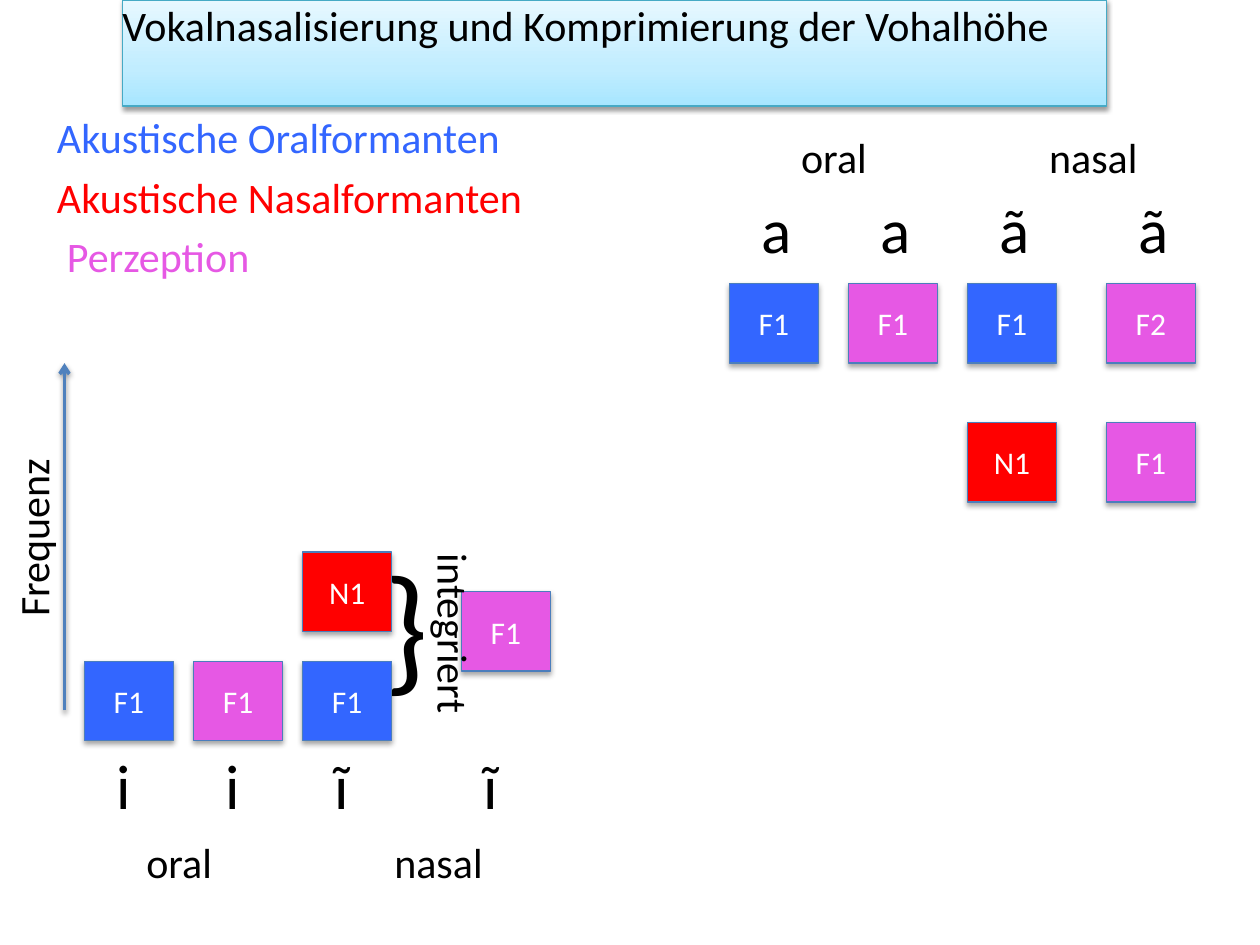
from collections import namedtuple
from copy import deepcopy

from lxml.etree import SubElement
from pptx import Presentation
from pptx.dml.color import RGBColor
from pptx.enum.shapes import MSO_CONNECTOR, MSO_SHAPE
from pptx.enum.text import MSO_ANCHOR, MSO_AUTO_SIZE, PP_ALIGN
from pptx.oxml.ns import qn
from pptx.util import Inches, Mm, Pt

BLUE = RGBColor(0x33, 0x66, 0xFF)
RED = RGBColor(0xFF, 0x00, 0x00)
PINK = RGBColor(0xE6, 0x58, 0xE4)
BLACK = RGBColor(0x00, 0x00, 0x00)
WHITE = RGBColor(0xFF, 0xFF, 0xFF)
OUTLINE = RGBColor(0x4B, 0x7E, 0xBC)
AXIS = RGBColor(0x4F, 0x81, 0xBD)
TITLE_LINE = RGBColor(0x46, 0xAA, 0xC5)
TITLE_STOPS = [
    (0, RGBColor(0xA7, 0xE6, 0xFF)),
    (0.35, RGBColor(0xC1, 0xED, 0xFF)),
    (1, RGBColor(0xE7, 0xF8, 0xFF)),
]
FONT = "Calibri"
TEXT_ROWS = 6.45
VOWEL_ROWS = 9
FORMANT_SIZE = (9, 8)
Box = namedtuple("Box", "left top width height")
Formant = namedtuple("Formant", "name column row color")
Label = namedtuple("Label", "text column width")


def grid(*cells):
    """Turn grid cells of two millimetres into lengths."""
    return [Mm(2 * cell) for cell in cells]


def inside(box, column, row, width, height):
    """Return a box placed relative to the corner of another."""
    return Box(box.left + column, box.top + row, width, height)


def add_shadow(shape, opacity=35, distance=1.8):
    """Give a shape or connector a soft shadow straight below it."""
    effects = SubElement(shape._element.spPr, qn("a:effectLst"))
    shadow = SubElement(effects, qn("a:outerShdw"), blurRad=str(Pt(3.1)),
                        dist=str(Pt(distance)), dir="5400000", rotWithShape="0")
    color = SubElement(shadow, qn("a:srgbClr"), val=str(BLACK))
    SubElement(color, qn("a:alpha"), val=str(opacity * 1000))


def write(shape, text, size, color, align=PP_ALIGN.LEFT):
    """Write one formatted paragraph into a shape."""
    shape.text_frame.text = text
    para = shape.text_frame.paragraphs[0]
    para.alignment = align
    font = para.runs[0].font
    font.name, font.size, font.color.rgb = FONT, Pt(size), color


def add_text(page, box, text, size=24, color=BLACK, rotation=0, wrap=False):
    """Add a text box that fits its text."""
    shape = page.shapes.add_textbox(*grid(*box))
    write(shape, text, size, color)
    shape.text_frame.word_wrap = wrap
    shape.text_frame.auto_size = MSO_AUTO_SIZE.SHAPE_TO_FIT_TEXT
    shape.rotation = rotation


def add_rectangle(page, box, line):
    """Add a rectangle with a thin outline."""
    shape = page.shapes.add_shape(MSO_SHAPE.RECTANGLE, *grid(*box))
    shape.line.color.rgb, shape.line.width = line, Pt(0.75)
    return shape


def add_title(page, box):
    """Draw the title bar with its vertical gradient."""
    bar = add_rectangle(page, box, TITLE_LINE)
    bar.fill.gradient()
    bar.fill.gradient_angle = 90
    stops = bar._element.spPr.find(qn("a:gradFill")).find(qn("a:gsLst"))
    stops.insert(1, deepcopy(stops[0]))
    for stop, (position, color) in zip(bar.fill.gradient_stops, TITLE_STOPS):
        stop.position, stop.color.rgb = position, color
    add_shadow(bar, 38, 1.6)
    write(bar, "Vokalnasalisierung und Komprimierung der Vohalhöhe", 24, BLACK)
    frame = bar.text_frame
    frame.vertical_anchor = MSO_ANCHOR.TOP
    frame.margin_left = frame.margin_top = frame.margin_bottom = 0
    frame.margin_right = Inches(0.04)


def add_legend(page, box):
    """List the three colour meanings at equal row distances."""
    entries = [("Akustische Oralformanten", BLUE, 0, 47.6, False),
               ("Akustische Nasalformanten", RED, 0, 49.8, False),
               ("Perzeption", PINK, 1, 49, True)]
    for index, (text, color, indent, width, wrap) in enumerate(entries):
        place = inside(box, indent, index * box.height / len(entries), width, TEXT_ROWS)
        add_text(page, place, text, color=color, wrap=wrap)


def add_frequency_axis(page, box):
    """Draw the upward frequency arrow with its turned caption."""
    right, bottom = box.left + box.width, box.top + box.height
    arrow = page.shapes.add_connector(
        MSO_CONNECTOR.STRAIGHT, *grid(right, bottom, right, box.top))
    arrow.line.color.rgb, arrow.line.width = AXIS, Pt(2)
    SubElement(arrow.line._get_or_add_ln(), qn("a:tailEnd"), type="arrow")
    add_shadow(arrow, 38, 1.6)
    caption = inside(box, -6, 14.2, 18.7, TEXT_ROWS)
    add_text(page, caption, "Frequenz", rotation=270)


def add_vowel_chart(page, box, formants, vowels, vowel_row, groups, group_row):
    """Draw formant squares with their vowel and group labels."""
    for formant in formants:
        place = inside(box, formant.column, formant.row, *FORMANT_SIZE)
        square = add_rectangle(page, place, OUTLINE)
        square.fill.solid()
        square.fill.fore_color.rgb = formant.color
        add_shadow(square)
        write(square, formant.name, 18, WHITE, PP_ALIGN.CENTER)
        square.text_frame.vertical_anchor = MSO_ANCHOR.MIDDLE
    for labels, row, height, size in ((vowels, vowel_row, VOWEL_ROWS, 36),
                                      (groups, group_row, TEXT_ROWS, 24)):
        for label in labels:
            place = inside(box, label.column, row, label.width, height)
            add_text(page, place, label.text, size)


def add_integration(page, box):
    """Mark two formants as integrated with a brace and turned text."""
    add_text(page, inside(box, 1.2, 0, 7, 18.4), "}", 80)
    add_text(page, inside(box, 0, 7.2, 18.9, TEXT_ROWS), "integriert", rotation=90)


def main():
    """Build the slide and save it."""
    deck = Presentation()
    deck.slide_width, deck.slide_height = Inches(10), Inches(7.5)
    page = deck.slides.add_slide(deck.slide_layouts[6])
    add_title(page, Box(12.35, 0, 99.2, 10.7))
    add_legend(page, Box(4.5, 10.65, 50, 18))
    add_frequency_axis(page, Box(0, 36.6, 6.5, 35))
    add_vowel_chart(
        page, Box(8.5, 55.65, 47, 34.6),
        [Formant("F1", 0, 11, BLUE), Formant("F1", 11, 11, PINK),
         Formant("F1", 22, 11, BLUE), Formant("N1", 22, 0, RED),
         Formant("F1", 38, 4, PINK)],
        [Label("i", 2, 4.1), Label("i", 13, 4.1),
         Label("ĩ", 24, 4.7), Label("ĩ", 39, 4.7)], 19,
        [Label("oral", 5, 9.4), Label("nasal", 30, 11.6)], 28)
    add_integration(page, Box(36.3, 53.6, 19, 26))
    add_vowel_chart(
        page, Box(73.5, 12.6, 47, 38),
        [Formant("F1", 0, 16, BLUE), Formant("F1", 12, 16, PINK),
         Formant("F1", 24, 16, BLUE), Formant("N1", 24, 30, RED),
         Formant("F2", 38, 16, PINK), Formant("F1", 38, 30, PINK)],
        [Label("a", 2, 5.6), Label("a", 14, 5.6),
         Label("ã", 26, 5.6), Label("ã", 40, 5.6)], 6,
        [Label("oral", 6, 9.4), Label("nasal", 31, 11.6)], 0)
    deck.save("out.pptx")


if __name__ == "__main__":
    main()
